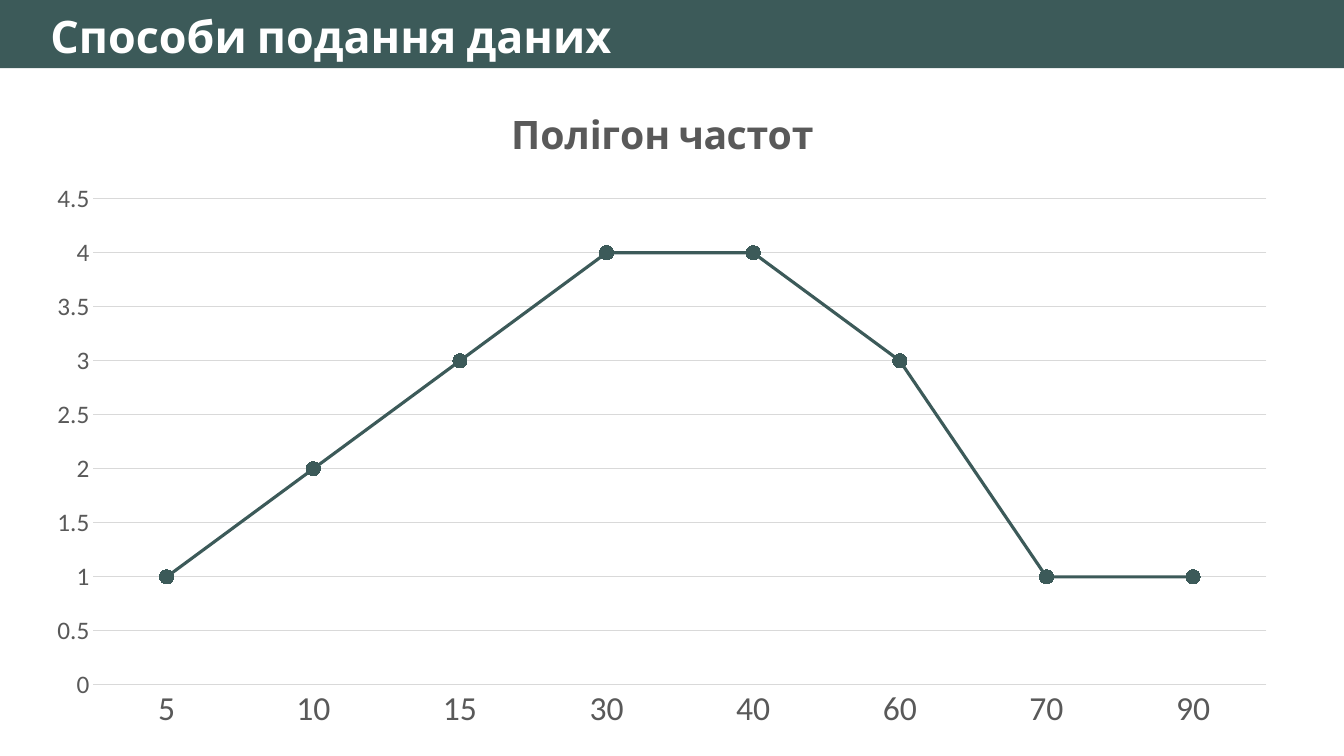
from pptx import Presentation
from pptx.chart.data import CategoryChartData
from pptx.dml.color import RGBColor
from pptx.enum.chart import XL_CHART_TYPE, XL_MARKER_STYLE, XL_TICK_MARK
from pptx.enum.shapes import MSO_SHAPE
from pptx.enum.text import MSO_ANCHOR, PP_ALIGN
from pptx.util import Inches, Pt

TEAL = RGBColor(0x3C, 0x5A, 0x59)
WHITE = RGBColor(0xFF, 0xFF, 0xFF)
GREY = RGBColor(0x59, 0x59, 0x59)
PALE = RGBColor(0xD9, 0xD9, 0xD9)
HEAD, BODY = "Cabin", "Calibri"
WIDE, HIGH = Inches(13.33), Inches(7.5)


def share(box, left, top, width, height):
    """Return the part of a box given by shares of its sides."""
    x, y, w, h = box
    return (int(x + left * w), int(y + top * h),
            int(width * w), int(height * h))


def style(font, name, size, color, bold=False):
    """Set the face, size, colour and weight of a font."""
    font.name, font.size, font.bold = name, Pt(size), bold
    font.color.rgb = color


def draw_line(line, color, width):
    """Give a line its colour and width."""
    line.color.rgb = color
    line.width = Pt(width)


def add_head(slide, box, text):
    """Place the title on a filled band."""
    band = slide.shapes.add_shape(MSO_SHAPE.RECTANGLE, *box)
    band.shadow.inherit = False
    band.fill.solid()
    band.fill.fore_color.rgb = TEAL
    band.line.fill.background()
    title = slide.shapes.title
    title._element.addprevious(band._element)
    title.left, title.top, title.width, title.height = share(
        box, 0.03, 0.06, 0.96, 0.94)
    frame = title.text_frame
    frame.word_wrap = True
    frame.vertical_anchor = MSO_ANCHOR.TOP
    para = frame.paragraphs[0]
    para.alignment = PP_ALIGN.LEFT
    run = para.add_run()
    run.text = text
    style(run.font, HEAD, 32, WHITE, True)


def add_graph(slide, box, text, cats, vals):
    """Place a titled line chart with round markers."""
    data = CategoryChartData()
    data.categories = cats
    data.add_series("Series 1", vals)
    chart = slide.shapes.add_chart(
        XL_CHART_TYPE.LINE_MARKERS, *box, data).chart
    chart.has_legend = False
    chart.font.name, chart.font.size = BODY, Pt(10)
    run = chart.chart_title.text_frame.paragraphs[0].add_run()
    run.text = text
    style(run.font, HEAD, 28, GREY, True)
    chart.chart_title.include_in_layout = False

    for axis, size in ((chart.category_axis, 24), (chart.value_axis, 18)):
        axis.major_tick_mark = axis.minor_tick_mark = XL_TICK_MARK.NONE
        style(axis.tick_labels.font, BODY, size, GREY)
    draw_line(chart.category_axis.format.line, PALE, 0.75)
    chart.value_axis.format.line.fill.background()
    draw_line(chart.value_axis.major_gridlines.format.line, PALE, 0.75)

    plot = chart.plots[0]
    plot.vary_by_categories = False
    curve = plot.series[0]
    curve.smooth = False
    draw_line(curve.format.line, TEAL, 2.25)
    mark = curve.marker
    mark.style, mark.size = XL_MARKER_STYLE.CIRCLE, 10
    mark.format.fill.solid()
    mark.format.fill.fore_color.rgb = TEAL
    draw_line(mark.format.line, TEAL, 0.75)


def main():
    """Build the slide and save it."""
    deck = Presentation()
    deck.slide_width, deck.slide_height = WIDE, HIGH
    slide = deck.slides.add_slide(deck.slide_layouts[5])
    page = (0, 0, WIDE, HIGH)
    add_head(slide, share(page, 0, 0, 1, 0.09), "Способи подання даних")
    add_graph(slide, share(page, 0.024, 0.107, 0.937, 0.876),
              "Полігон частот",
              ["5", "10", "15", "30", "40", "60", "70", "90"],
              [1, 2, 3, 4, 4, 3, 1, 1])
    deck.save("out.pptx")


if __name__ == "__main__":
    main()
